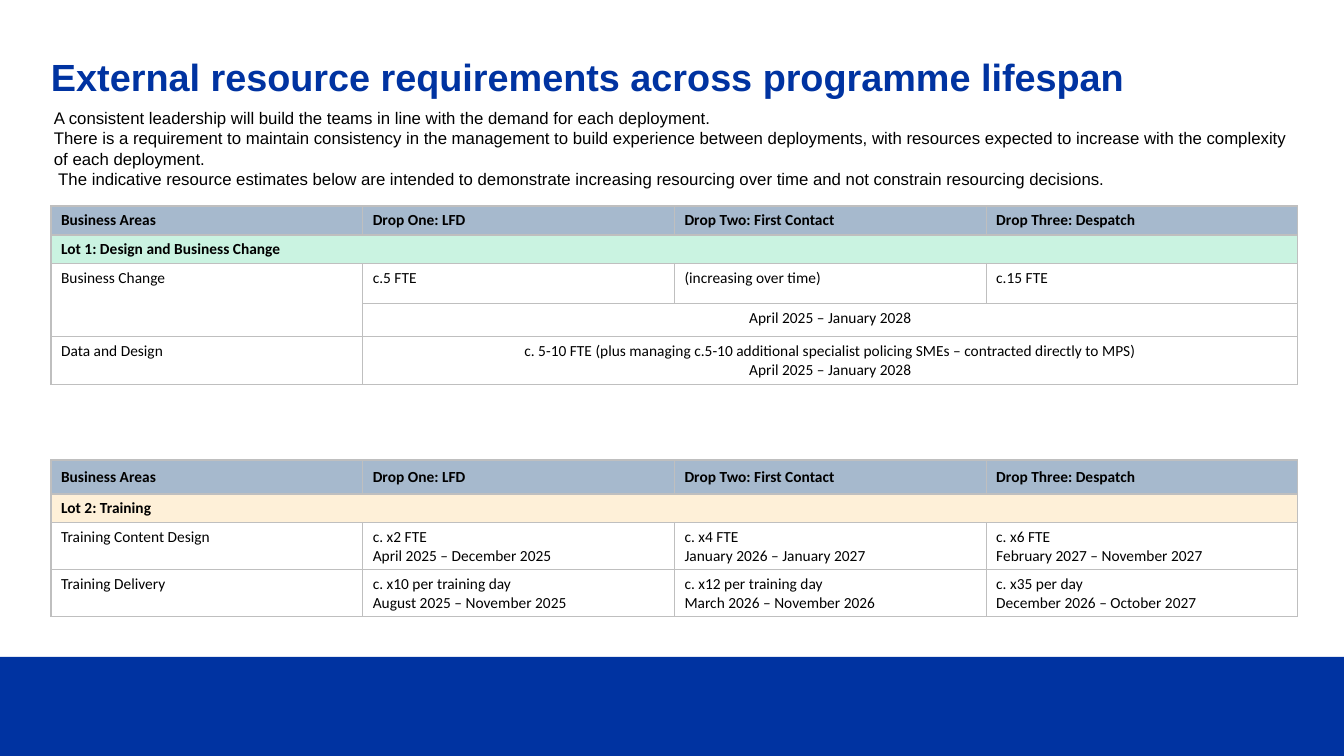
from lxml.etree import SubElement
from pptx import Presentation
from pptx.dml.color import RGBColor
from pptx.enum.shapes import MSO_SHAPE
from pptx.enum.text import MSO_ANCHOR, PP_ALIGN
from pptx.oxml.ns import qn
from pptx.util import Emu, Pt

PX = 914400 / 100.8
COLORS = {
    "blue": "0033A1", "black": "000000", "header": "A6B9CD",
    "lot 1": "CAF3E1", "lot 2": "FEF0D8", "border": "BFBFBF",
}


def px(*lengths):
    return [Emu(round(length * PX)) for length in lengths]


def set_font(para, name, size, color, bold=False):
    para.font.name = name
    para.font.size = Pt(size)
    para.font.bold = bold
    para.font.color.rgb = RGBColor.from_string(COLORS[color])


deck = Presentation()
deck.slide_width, deck.slide_height = px(1344, 756)
page = deck.slides.add_slide(deck.slide_layouts[6])

# Footer band
band = page.shapes.add_shape(MSO_SHAPE.RECTANGLE, *px(0, 657, 1344, 99))
band.shadow.inherit = False
band.fill.solid()
band.fill.fore_color.rgb = RGBColor.from_string(COLORS["blue"])
band.line.fill.background()

# Title
title = page.shapes.add_textbox(*px(51, 57, 1241, 120)).text_frame
title.word_wrap = True
title.margin_left = title.margin_right = title.margin_top = title.margin_bottom = 0
para = title.paragraphs[0]
para.text = "External resource requirements across programme lifespan"
para.line_spacing = Pt(30)
para.space_after = Pt(6)
set_font(para, "Arial", 27, "blue", bold=True)

# Introduction
intro = page.shapes.add_textbox(*px(44, 103, 1263, 92)).text_frame
intro.word_wrap = True
intro.text = "\n".join([
    "A consistent leadership will build the teams in line with the demand for each deployment.",
    "There is a requirement to maintain consistency in the management to build experience between "
    "deployments, with resources expected to increase with the complexity of each deployment.",
    " The indicative resource estimates below are intended to demonstrate increasing resourcing "
    "over time and not constrain resourcing decisions.",
])
for para in intro.paragraphs:
    set_font(para, "Arial", 12, "black")

# Lot tables: the last cell of a short row spans the rest, an empty cell continues the one above
HEADINGS = ["Business Areas", "Drop One: LFD", "Drop Two: First Contact", "Drop Three: Despatch"]
LOTS = [
    ("lot 1", 206, [29, 28, 40, 33, 48], [
        HEADINGS,
        ["Lot 1: Design and Business Change"],
        ["Business Change", "c.5 FTE", "(increasing over time)", "c.15 FTE"],
        ["", "April 2025 – January 2028"],
        ["Data and Design",
         "c. 5-10 FTE (plus managing c.5-10 additional specialist policing SMEs – "
         "contracted directly to MPS)\nApril 2025 – January 2028"],
    ]),
    ("lot 2", 460, [34, 28, 47, 47], [
        HEADINGS,
        ["Lot 2: Training"],
        ["Training Content Design", "c. x2 FTE\nApril 2025 – December 2025",
         "c. x4 FTE\nJanuary 2026 – January 2027", "c. x6 FTE\nFebruary 2027 – November 2027"],
        ["Training Delivery", "c. x10 per training day\nAugust 2025 – November 2025",
         "c. x12 per training day\nMarch 2026 – November 2026",
         "c. x35 per day\nDecember 2026 – October 2027"],
    ]),
]
COLUMNS = len(HEADINGS)

for lot, top, heights, rows in LOTS:
    frame = page.shapes.add_table(len(rows), COLUMNS, *px(51, top, 1247, sum(heights)))
    table = frame.table
    table.first_row = table.horz_banding = False
    for row, height in zip(table.rows, heights):
        row.height, = px(height)

    # Borders and fills
    for r in range(len(rows)):
        for c in range(COLUMNS):
            cell = table.cell(r, c)
            properties = cell._tc.get_or_add_tcPr()
            for side in ("a:lnL", "a:lnR", "a:lnT", "a:lnB"):
                line = SubElement(properties, qn(side), w=str(Pt(1)))
                fill = SubElement(line, qn("a:solidFill"))
                SubElement(fill, qn("a:srgbClr"), val=COLORS["border"])
            if r < 2:
                cell.fill.solid()
                cell.fill.fore_color.rgb = RGBColor.from_string(COLORS[("header", lot)[r]])
            else:
                cell.fill.background()

    # Spans and text
    for r, texts in enumerate(rows):
        for c, text in enumerate(texts):
            cell = table.cell(r, c)
            if not text:
                table.cell(r - 1, c).merge(cell)
                continue
            spans = c == len(texts) - 1 and c < COLUMNS - 1
            if spans:
                cell.merge(table.cell(r, COLUMNS - 1))
            cell.text = text
            cell.vertical_anchor = MSO_ANCHOR.MIDDLE if r == 0 else MSO_ANCHOR.TOP
            for para in cell.text_frame.paragraphs:
                para.alignment = PP_ALIGN.CENTER if spans and c > 0 else PP_ALIGN.LEFT
                set_font(para, "Calibri", 11, "black", bold=r < 2)

deck.save("out.pptx")
